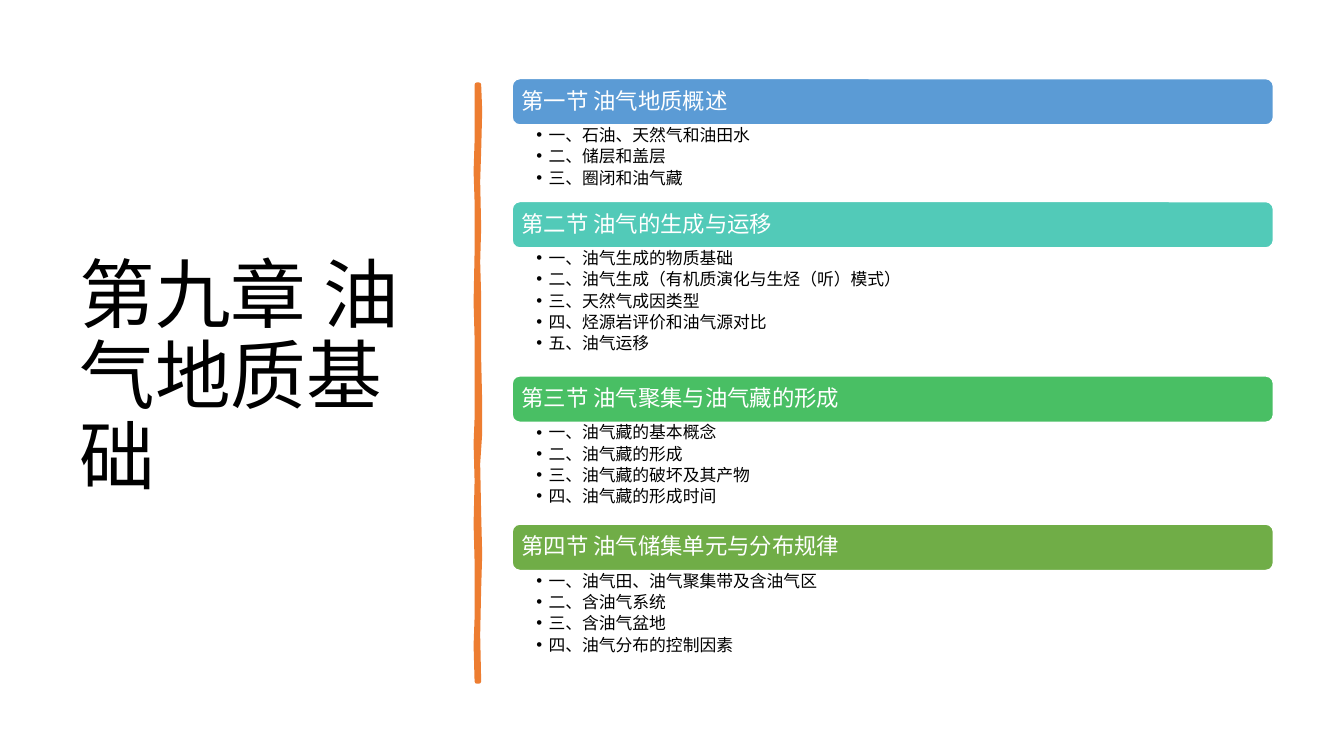
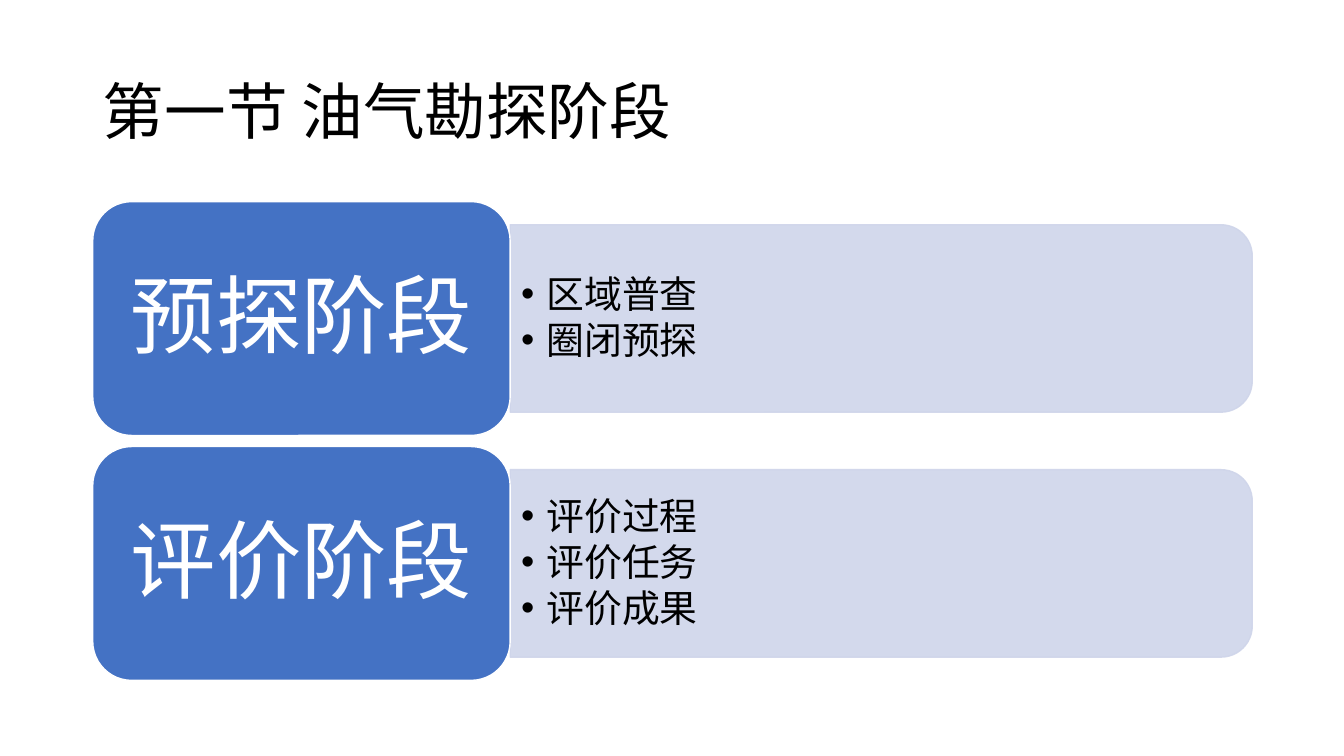
from dataclasses import dataclass

from lxml import etree
from pptx import Presentation
from pptx.dml.color import RGBColor
from pptx.enum.shapes import MSO_SHAPE
from pptx.enum.text import MSO_ANCHOR, MSO_AUTO_SIZE, PP_ALIGN
from pptx.oxml.ns import qn
from pptx.util import Pt

ROUND, TAB = MSO_SHAPE.ROUNDED_RECTANGLE, MSO_SHAPE.ROUND_2_SAME_RECTANGLE
TOP, MID = MSO_ANCHOR.TOP, MSO_ANCHOR.MIDDLE
LEFT, CENTER = PP_ALIGN.LEFT, PP_ALIGN.CENTER
FIXED = MSO_AUTO_SIZE.NONE
PX = 9144  # 100 px to the inch


@dataclass(frozen=True)
class Theme:
    font: str = "Noto Sans CJK SC"
    ink: str = "000000"
    paper: str = "FFFFFF"
    rule: str = "ED7D31"
    card: str = "4472C4"
    panel: str = "CFD5EA"
    opacity: int = 90
    bars: tuple = ("5B9BD5", "52CAB8", "49BF64", "70AD47")
    cover: int = 54
    title: int = 44
    bar: int = 16
    item: int = 12
    label: int = 61
    point: int = 27
    leading: float = 1.07


THEME = Theme()

CHAPTER = "第九章 油气地质基础"
SECTIONS = [
    ("第一节 油气地质概述",
     ["一、石油、天然气和油田水", "二、储层和盖层", "三、圈闭和油气藏"]),
    ("第二节 油气的生成与运移",
     ["一、油气生成的物质基础", "二、油气生成（有机质演化与生烃（听）模式）",
      "三、天然气成因类型", "四、烃源岩评价和油气源对比", "五、油气运移"]),
    ("第三节 油气聚集与油气藏的形成",
     ["一、油气藏的基本概念", "二、油气藏的形成",
      "三、油气藏的破坏及其产物", "四、油气藏的形成时间"]),
    ("第四节 油气储集单元与分布规律",
     ["一、油气田、油气聚集带及含油气区", "二、含油气系统",
      "三、含油气盆地", "四、油气分布的控制因素"]),
]
STAGE = "第一节 油气勘探阶段"
STAGES = [
    ("预探阶段", ["区域普查", "圈闭预探"]),
    ("评价阶段", ["评价过程", "评价任务", "评价成果"]),
]
# Hand-drawn rule: right edge going down, then left edge going up
STROKE = [
    (475, 84), (476, 110), (475, 150), (474, 180), (475, 226), (474, 260),
    (475, 294), (475, 356), (476, 400), (476, 430), (474, 460), (475, 510),
    (476, 550), (475, 584), (474, 630), (475, 676),
    (473, 676), (472, 640), (473, 613), (473, 557), (472, 520), (473, 477),
    (472, 440), (473, 415), (473, 335), (472, 300), (473, 250), (473, 200),
    (472, 170), (473, 140), (473, 84),
]


def px(*nums):
    return [round(n * PX) for n in nums]


def paint(shape, fill, line, width=1):
    shape.shadow.inherit = False
    shape.fill.solid()
    shape.fill.fore_color.rgb = RGBColor.from_string(fill)
    shape.line.color.rgb = RGBColor.from_string(line)
    shape.line.width = Pt(width)


def fade(shape, percent):
    for color in shape._element.spPr.iter(qn("a:srgbClr")):
        etree.SubElement(color, qn("a:alpha")).set("val", str(percent * 1000))


def frame(shape, inset, anchor):
    """Set wrapping, anchor and (left, top, right, bottom) insets."""
    text = shape.text_frame
    text.word_wrap = True
    text.auto_size = FIXED
    text.vertical_anchor = anchor
    (text.margin_left, text.margin_top,
     text.margin_right, text.margin_bottom) = px(*inset)
    return text


def write(text, lines, size, color, align=LEFT, after=0, hang=0):
    """Fill a text frame; a hang above 0 makes the lines bulleted."""
    for i, line in enumerate(lines):
        para = text.paragraphs[0] if i == 0 else text.add_paragraph()
        para.alignment = align
        para.line_spacing = Pt(round(size * THEME.leading, 1))
        para.space_before = Pt(0)
        para.space_after = Pt(round(size * after, 1))
        if hang:
            props = para._p.get_or_add_pPr()
            props.set("marL", str(hang * PX))
            props.set("indent", str(-hang * PX))
            font = etree.SubElement(props, qn("a:buFont"))
            font.set("typeface", "Arial")
            etree.SubElement(props, qn("a:buChar")).set("char", "•")
        run = para.add_run()
        run.text = line
        run.font.size = Pt(size)
        run.font.name = THEME.font
        run.font.color.rgb = RGBColor.from_string(color)
        east = etree.SubElement(run._r.get_or_add_rPr(), qn("a:ea"))
        east.set("typeface", THEME.font)


def start(deck, title, box, size):
    """Add a slide with its title placed in box."""
    slide = deck.slides.add_slide(deck.slide_layouts[5])
    head = slide.shapes.title
    head.left, head.top, head.width, head.height = px(*box)
    write(frame(head, (10, 5, 10, 5), MID), [title], size, THEME.ink)
    return slide.shapes


def block(shapes, kind, box, fill, line):
    shape = shapes.add_shape(kind, *px(*box))
    paint(shape, fill, line)
    return shape


def bullets(shapes, box, lines, size, inset, anchor, after, hang):
    text = frame(shapes.add_textbox(*px(*box)), inset, anchor)
    write(text, lines, size, THEME.ink, after=after, hang=hang)


def outline(deck):
    shapes = start(deck, CHAPTER, (69, 70, 374, 611), THEME.cover)
    pen = shapes.build_freeform(*STROKE[0], scale=PX)
    pen.add_line_segments(STROKE[1:], close=True)
    paint(pen.convert_to_shape(), THEME.rule, THEME.rule, 3.25)

    left, top, wide, tall = 508, 78, 755, 46
    for (name, items), color in zip(SECTIONS, THEME.bars):
        bar = block(shapes, ROUND, (left, top, wide, tall), color, THEME.paper)
        write(frame(bar, (7, 7, 7, 7), MID), [name], THEME.bar, THEME.paper)
        top += tall
        deep = len(items) * 127 // 5
        bullets(shapes, (left, top, wide, deep), items, THEME.item,
                (24, 2, 12, 2), TOP, 0.2, 12)
        top += deep


def stages(deck):
    shapes = start(deck, STAGE, (92, 40, 1150, 145), THEME.title)
    left, first, step = 92, 200, 243
    wide, tall = 414, 232
    long, deep = 736, 186
    side = left + wide
    for i, (name, points) in enumerate(STAGES):
        top = first + i * step
        mid = top + tall // 2
        # Turned a quarter, so its width and height trade places
        spot = (side + (long - deep) // 2, mid - long // 2, deep, long)
        panel = block(shapes, TAB, spot, THEME.panel, THEME.panel)
        panel.rotation = 90
        fade(panel, THEME.opacity)
        bullets(shapes, (side, mid - 84, 727, 168), points, THEME.point,
                (11, 6, 11, 6), MID, 0.15, 25)
        card = block(shapes, ROUND, (left, top, wide, tall),
                     THEME.card, THEME.paper)
        write(frame(card, (10, 10, 10, 10), MID), [name],
              THEME.label, THEME.paper, CENTER)


def main():
    deck = Presentation()
    deck.slide_width, deck.slide_height = px(1333, 750)
    outline(deck)
    stages(deck)
    deck.save("out.pptx")


if __name__ == "__main__":
    main()
